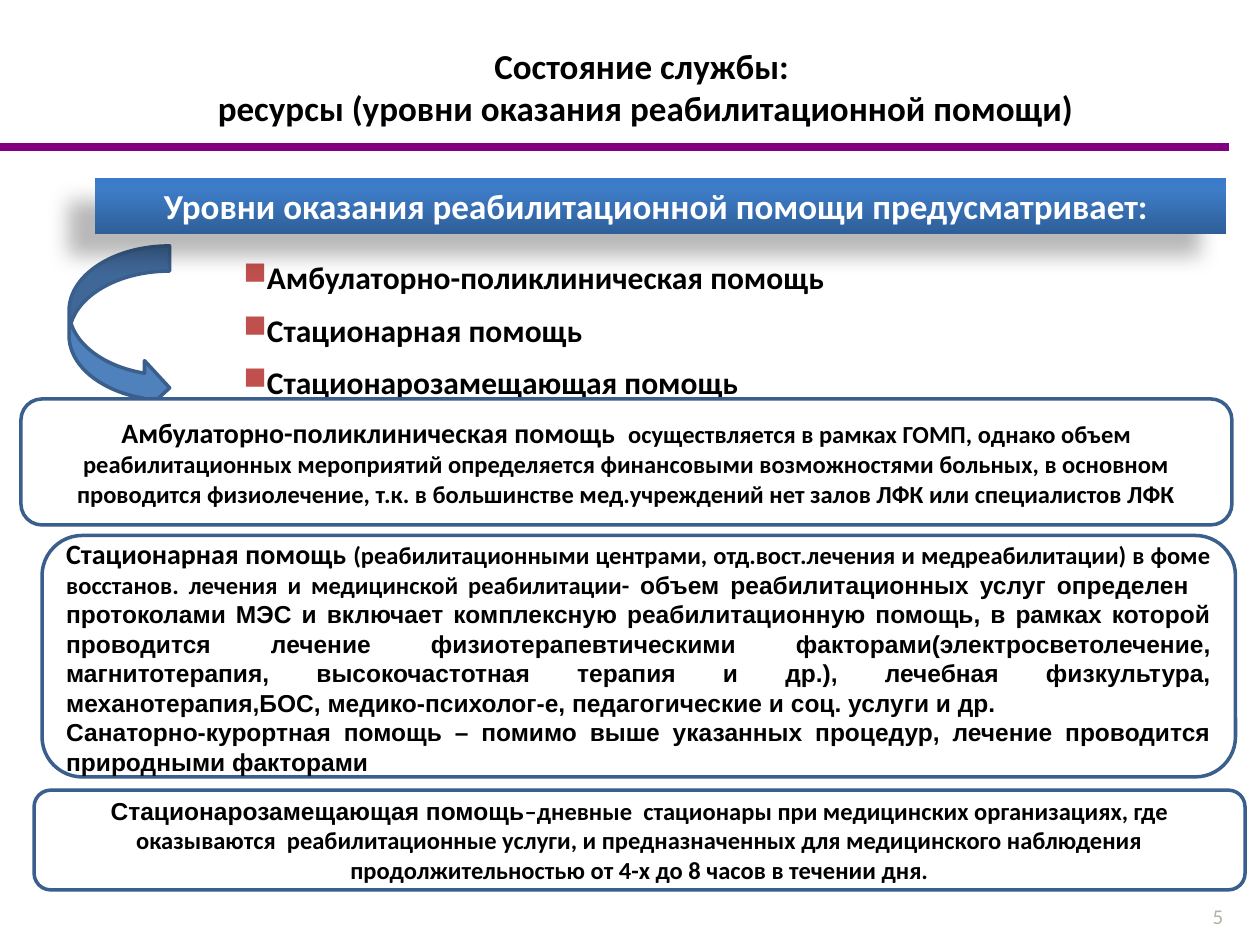
from lxml import etree
from pptx import Presentation
from pptx.dml.color import RGBColor
from pptx.enum.shapes import MSO_CONNECTOR, MSO_SHAPE
from pptx.enum.text import MSO_ANCHOR, PP_ALIGN
from pptx.oxml import parse_xml
from pptx.oxml.ns import qn
from pptx.util import Pt

MID, TOP, LOW = MSO_ANCHOR.MIDDLE, MSO_ANCHOR.TOP, MSO_ANCHOR.BOTTOM
LEFT, CENTER, FULL = PP_ALIGN.LEFT, PP_ALIGN.CENTER, PP_ALIGN.JUSTIFY
RECT, ROUND = MSO_SHAPE.RECTANGLE, MSO_SHAPE.ROUNDED_RECTANGLE
CURVE, STRAIGHT = MSO_SHAPE.CURVED_RIGHT_ARROW, MSO_CONNECTOR.STRAIGHT

BLACK = RGBColor(0, 0, 0)
WHITE = RGBColor(255, 255, 255)
GRAY = RGBColor(0xB5, 0xB2, 0xA2)
BLUE = RGBColor(0x4F, 0x81, 0xBD)
NAVY = RGBColor(0x3A, 0x5F, 0x8C)
RED = RGBColor(0xC0, 0x50, 0x4D)
PURPLE = RGBColor(0x80, 0, 0x80)
NS = 'xmlns:a="http://schemas.openxmlformats.org/drawingml/2006/main"'

# Content: runs are (text, size, font)
TITLE = ["Состояние службы: ", "ресурсы (уровни оказания реабилитационной помощи)"]
HEAD = "Уровни оказания реабилитационной помощи предусматривает: "
KINDS = [
    ("Амбулаторно-поликлиническая помощь", 455),
    ("Стационарная помощь", 392),
    ("Стационарозамещающая помощь", 472),
]
CARDS = [  # left, top, width, height, align, paragraphs
    (24, 306, 682, 138, FULL, [
        [("Стационарная помощь ", 16, "Calibri"),
         ("(реабилитационными центрами, отд.вост.лечения и медреабилитации) в фоме "
          "восстанов. лечения и медицинской реабилитации- ", 14, "Calibri"),
         ("объем реабилитационных услуг определен   протоколами МЭС и включает "
          "комплексную реабилитационную помощь, в рамках которой проводится лечение "
          "физиотерапевтическими факторами(электросветолечение, магнитотерапия, "
          "высокочастотная терапия и др.), лечебная физкультура, механотерапия,БОС, "
          "медико-психолог-е, педагогические и соц. услуги и др.", 14, "Arial")],
        [("Санаторно-курортная помощь – помимо выше указанных процедур, лечение "
          "проводится природными факторами", 14, "Arial")]]),
    (19.5, 451.5, 692, 57, CENTER, [
        [("Стационарозамещающая помощь", 14, "Arial"),
         ("–дневные  стационары при медицинских организациях, где оказываются  "
          "реабилитационные услуги, и предназначенных для медицинского наблюдения "
          "продолжительностью от 4-х до 8 часов в течении дня.", 14, "Calibri")]]),
    (12, 228, 692, 72, CENTER, [
        [("Амбулаторно-поликлиническая помощь  ", 16, "Calibri"),
         ("осуществляется в рамках ГОМП, однако объем реабилитационных мероприятий "
          "определяется финансовыми возможностями больных, в основном проводится "
          "физиолечение, т.к. в большинстве мед.учреждений нет залов ЛФК или "
          "специалистов ЛФК", 14, "Calibri")]]),
]

deck = Presentation()
deck.slide_width, deck.slide_height = Pt(720), Pt(540)
slide = deck.slides.add_slide(deck.slide_layouts[5])
shapes = slide.shapes


def add_run(para, text, size, font="Calibri", color=BLACK, bold=True):
    run = para.add_run()
    run.text = text
    run.font.size, run.font.name = Pt(size), font
    run.font.bold, run.font.color.rgb = bold, color


def set_frame(shape, anchor, align):
    frame = shape.text_frame
    frame.word_wrap, frame.vertical_anchor = True, anchor
    frame.paragraphs[0].alignment = align
    return frame.paragraphs[0]


def add_box(x, y, w, h, anchor, align):
    return set_frame(shapes.add_textbox(Pt(x), Pt(y), Pt(w), Pt(h)), anchor, align)


def add_form(kind, x, y, w, h, fill):
    form = shapes.add_shape(kind, Pt(x), Pt(y), Pt(w), Pt(h))
    form.shadow.inherit = False
    form.fill.solid()
    form.fill.fore_color.rgb = fill
    form.line.color.rgb, form.line.width = NAVY, Pt(2)
    return form


# Title
title = shapes.title
title.left, title.top, title.width, title.height = Pt(48), Pt(18), Pt(642), Pt(63)
para = set_frame(title, MID, CENTER)
for i, text in enumerate(TITLE):
    if i:
        para.add_line_break()
    add_run(para, text, 20)

# Slide number
add_run(add_box(678, 497, 36, 37, LOW, CENTER), "5", 12, color=GRAY, bold=False)

# Curved arrow and bulleted list
add_form(CURVE, 39.5, 140.5, 57.5, 95.5, BLUE)
for i, (text, width) in enumerate(KINDS):
    para = add_box(132, 144 + 30 * i, width, 29, TOP, LEFT)
    para.space_before = Pt(7)
    props = para._p.get_or_add_pPr()
    tint = etree.SubElement(props, qn("a:buClr"))
    etree.SubElement(tint, qn("a:srgbClr"), val=str(RED))
    etree.SubElement(props, qn("a:buChar"), char="■")
    add_run(para, text, 18)

# Header bar with gradient and shadow
bar = add_form(RECT, 54, 102, 646.5, 31.5, BLUE)
bar.line.fill.background()
props = bar._element.spPr
props.replace(props.find(qn("a:solidFill")), parse_xml(
    f'<a:gradFill {NS} rotWithShape="1"><a:gsLst>'
    '<a:gs pos="0"><a:srgbClr val="2F5F99"/></a:gs>'
    '<a:gs pos="80000"><a:srgbClr val="3D7CC7"/></a:gs>'
    '<a:gs pos="100000"><a:srgbClr val="3A7CCB"/></a:gs>'
    '</a:gsLst><a:lin ang="16200000" scaled="0"/></a:gradFill>'))
props.replace(props.find(qn("a:effectLst")), parse_xml(
    f'<a:effectLst {NS}><a:outerShdw blurRad="{Pt(11.8)}" dist="{Pt(19.7)}" '
    'dir="8460000" algn="ctr" rotWithShape="0"><a:srgbClr val="000000">'
    '<a:alpha val="28000"/></a:srgbClr></a:outerShdw></a:effectLst>'))
add_run(set_frame(bar, TOP, CENTER), HEAD, 20, color=WHITE)

# Description cards
for x, y, w, h, align, paras in CARDS:
    card = add_form(ROUND, x, y, w, h, WHITE)
    para = set_frame(card, MID, align)
    for i, runs in enumerate(paras):
        if i:
            para = card.text_frame.add_paragraph()
            para.alignment = align
        for run in runs:
            add_run(para, *run)

# Rule under the title
rule = shapes.add_connector(STRAIGHT, Pt(0), Pt(84), Pt(702), Pt(84))
rule.line.color.rgb, rule.line.width = PURPLE, Pt(4.5)
etree.SubElement(rule._element.spPr, qn("a:effectLst"))

deck.save("out.pptx")
